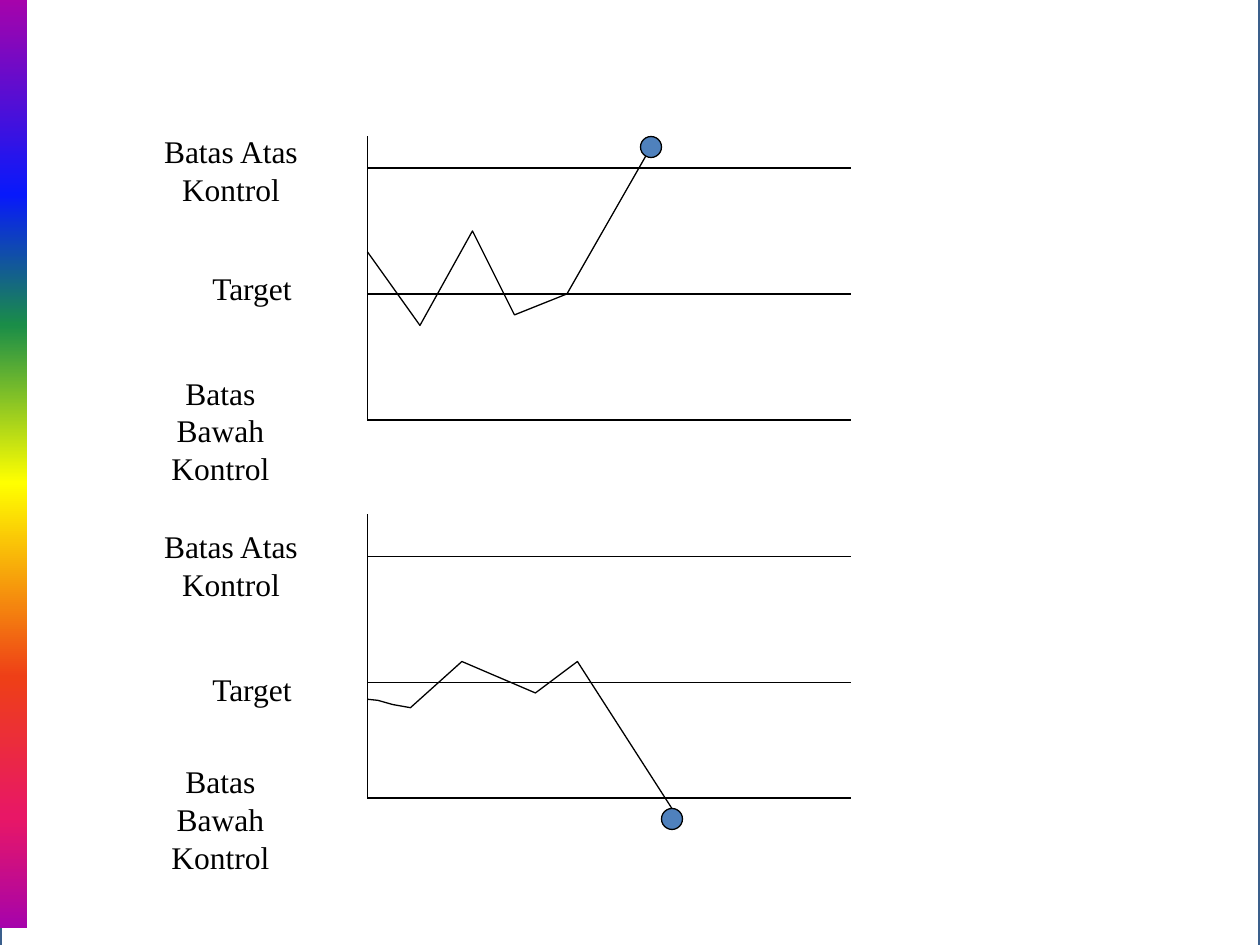
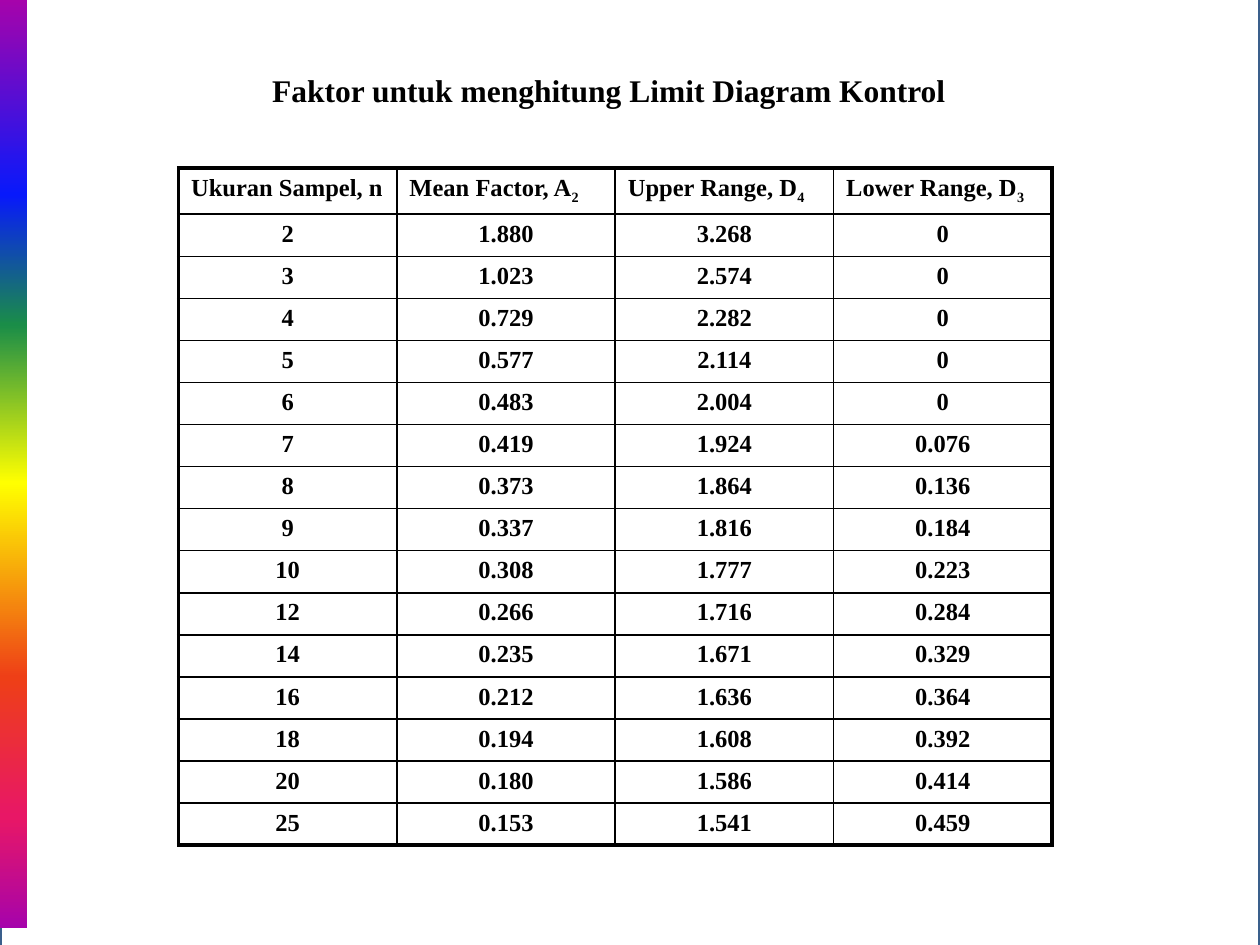
from dataclasses import dataclass
from typing import NamedTuple

from lxml.etree import SubElement
from pptx import Presentation
from pptx.dml.color import RGBColor
from pptx.enum.shapes import MSO_CONNECTOR as Connector, MSO_SHAPE as Shape
from pptx.enum.text import PP_ALIGN as Align
from pptx.oxml import parse_xml
from pptx.oxml.ns import nsdecls, qn
from pptx.util import Pt

PX = 7620  # EMU per px, 120 px to the inch
FONT = "Times New Roman"
BLACK, WHITE = "000000", "FFFFFF"
FRAME_BLUE, MARKER_BLUE = "3A5F8C", "4F81BD"
RAINBOW = [(0, "A603AB"), (21, "0819FB"), (35, "1A8D48"), (52, "FFFF00"),
           (73, "EE3F17"), (88, "E81766"), (100, "A603AB")]
THIN, INNER, OUTER = 0.75, 1, 2.25

AXIS_X, LIMIT_END_X = 350, 810
MARKER_SIZE = 20


class Box(NamedTuple):
    left: int
    top: int
    width: int
    height: int

    def emu(self) -> list[int]:
        return [length * PX for length in self]


class Label(NamedTuple):
    text: str
    left: int
    width: int
    height: int


class Heading(NamedTuple):
    text: str
    subscript: str = ""


@dataclass
class ControlChart:
    axis_top: int
    limits: tuple[int, int, int]
    label_tops: tuple[int, int, int]
    points: list[tuple[int, int]]
    marker: tuple[int, int]


LABELS = [
    Label("Batas Atas Kontrol", 130, 180, 84),
    Label("Target", 180, 120, 48),
    Label("Batas Bawah Kontrol", 120, 180, 84),
]

CHARTS = [
    ControlChart(130, (160, 280, 400), (120, 250, 350),
                 [(350, 240), (400, 310), (450, 220), (490, 300), (540, 280), (620, 140)],
                 (610, 130)),
    ControlChart(490, (530, 650, 760), (496, 632, 720),
                 [(350, 666), (360, 667), (374, 671), (391, 674), (440, 630),
                  (510, 660), (550, 630), (640, 770)],
                 (630, 770)),
]

HEADINGS = [
    Heading("Ukuran Sampel, n"),
    Heading("Mean Factor, A", "2"),
    Heading("Upper Range, D", "4"),
    Heading("Lower Range, D", "3"),
]

FACTORS = [
    ("2", "1.880", "3.268", "0"),
    ("3", "1.023", "2.574", "0"),
    ("4", "0.729", "2.282", "0"),
    ("5", "0.577", "2.114", "0"),
    ("6", "0.483", "2.004", "0"),
    ("7", "0.419", "1.924", "0.076"),
    ("8", "0.373", "1.864", "0.136"),
    ("9", "0.337", "1.816", "0.184"),
    ("10", "0.308", "1.777", "0.223"),
    ("12", "0.266", "1.716", "0.284"),
    ("14", "0.235", "1.671", "0.329"),
    ("16", "0.212", "1.636", "0.364"),
    ("18", "0.194", "1.608", "0.392"),
    ("20", "0.180", "1.586", "0.414"),
    ("25", "0.153", "1.541", "0.459"),
]
COLUMN_WIDTH, HEADING_HEIGHT, ROW_HEIGHT = 208, 44, 40


def color(value: str) -> RGBColor:
    return RGBColor.from_string(value)


def set_line(shape, value: str, width: float) -> None:
    shape.line.color.rgb = color(value)
    shape.line.width = Pt(width)


def set_font(paragraph, size: int, bold: bool = False) -> None:
    font = paragraph.font
    font.name, font.size, font.bold = FONT, Pt(size), bold
    font.color.rgb = color(BLACK)


def add_filled(slide, kind: Shape, box: Box, fill: str):
    shape = slide.shapes.add_shape(kind, *box.emu())
    shape.shadow.inherit = False
    shape.fill.solid()
    shape.fill.fore_color.rgb = color(fill)
    return shape


def add_rainbow_band(slide) -> None:
    band = slide.shapes.add_shape(Shape.RECTANGLE, *Box(0, 0, 26, 884).emu())
    band.shadow.inherit = False
    band.line.fill.background()
    stops = "".join(f'<a:gs pos="{position * 1000}"><a:srgbClr val="{value}"/></a:gs>'
                    for position, value in RAINBOW)
    gradient = parse_xml(f'<a:gradFill {nsdecls("a")} rotWithShape="1"><a:gsLst>{stops}</a:gsLst>'
                         '<a:lin ang="5400000" scaled="0"/></a:gradFill>')
    band.element.spPr.find(qn("a:prstGeom")).addnext(gradient)


def add_framed_slide(presentation):
    """Add a blank slide with the blue frame and the rainbow band."""
    slide = presentation.slides.add_slide(presentation.slide_layouts[6])
    frame = add_filled(slide, Shape.RECTANGLE, Box(0, -13, 1200, 936), WHITE)
    set_line(frame, FRAME_BLUE, 2)
    add_rainbow_band(slide)
    return slide


def add_text(slide, text: str, box: Box, bold: bool = False) -> None:
    frame = slide.shapes.add_textbox(*box.emu()).text_frame
    frame.word_wrap = True
    paragraph = frame.paragraphs[0]
    paragraph.text = text
    paragraph.alignment = Align.CENTER
    set_font(paragraph, 18, bold)


def add_line(slide, start: tuple[int, int], end: tuple[int, int]) -> None:
    ends = [length * PX for length in (*start, *end)]
    line = slide.shapes.add_connector(Connector.STRAIGHT, *ends)
    set_line(line, BLACK, THIN)
    SubElement(line._element.spPr, qn("a:effectLst"))


def add_trace(slide, points: list[tuple[int, int]]) -> None:
    builder = slide.shapes.build_freeform(*points[0], scale=PX)
    builder.add_line_segments(points[1:], close=False)
    trace = builder.convert_to_shape()
    trace.shadow.inherit = False
    trace.fill.background()
    set_line(trace, BLACK, THIN)


def add_control_chart(slide, chart: ControlChart) -> None:
    add_line(slide, (AXIS_X, chart.axis_top), (AXIS_X, chart.limits[-1]))
    for label, limit, top in zip(LABELS, chart.limits, chart.label_tops):
        add_line(slide, (AXIS_X, limit), (LIMIT_END_X, limit))
        add_text(slide, label.text, Box(label.left, top, label.width, label.height))
    add_trace(slide, chart.points)
    marker = add_filled(slide, Shape.OVAL, Box(*chart.marker, MARKER_SIZE, MARKER_SIZE), MARKER_BLUE)
    set_line(marker, BLACK, THIN)


def set_borders(cell, widths: dict[str, float]) -> None:
    properties = cell._tc.get_or_add_tcPr()
    for side, width in widths.items():
        properties.append(parse_xml(
            f'<a:ln{side} {nsdecls("a")} w="{Pt(width)}"><a:solidFill>'
            f'<a:srgbClr val="{BLACK}"/></a:solidFill></a:ln{side}>'))


def fill_heading(paragraph, heading: Heading) -> None:
    paragraph.add_run().text = heading.text
    if heading.subscript:
        run = paragraph.add_run()
        run.text = heading.subscript
        run._r.get_or_add_rPr().set("baseline", "-25000")


def add_factor_table(slide) -> None:
    rows = [HEADINGS, *FACTORS]
    last_row, last_column = len(rows) - 1, len(HEADINGS) - 1
    box = Box(170, 160, COLUMN_WIDTH * len(HEADINGS), HEADING_HEIGHT + ROW_HEIGHT * last_row)
    table = slide.shapes.add_table(len(rows), len(HEADINGS), *box.emu()).table
    table.first_row = table.horz_banding = False
    for column in table.columns:
        column.width = COLUMN_WIDTH * PX
    for r, values in enumerate(rows):
        table.rows[r].height = (ROW_HEIGHT if r else HEADING_HEIGHT) * PX
        for c, value in enumerate(values):
            cell = table.cell(r, c)
            paragraph = cell.text_frame.paragraphs[0]
            if r == 0:
                fill_heading(paragraph, value)
            else:
                paragraph.text = value
                paragraph.alignment = Align.CENTER
            set_font(paragraph, 14, bold=True)
            set_borders(cell, {
                "L": OUTER if c == 0 else INNER,
                "R": OUTER if c == last_column else INNER,
                "T": OUTER if r == 0 else INNER,
                "B": OUTER if r == last_row else INNER,
            })
            cell.fill.background()


def main() -> None:
    presentation = Presentation()
    presentation.slide_width, presentation.slide_height = 1200 * PX, 900 * PX

    slide = add_framed_slide(presentation)
    for chart in CHARTS:
        add_control_chart(slide, chart)

    slide = add_framed_slide(presentation)
    add_text(slide, "Faktor untuk menghitung Limit Diagram Kontrol", Box(220, 62, 720, 48), bold=True)
    add_factor_table(slide)

    presentation.save("out.pptx")


if __name__ == "__main__":
    main()
